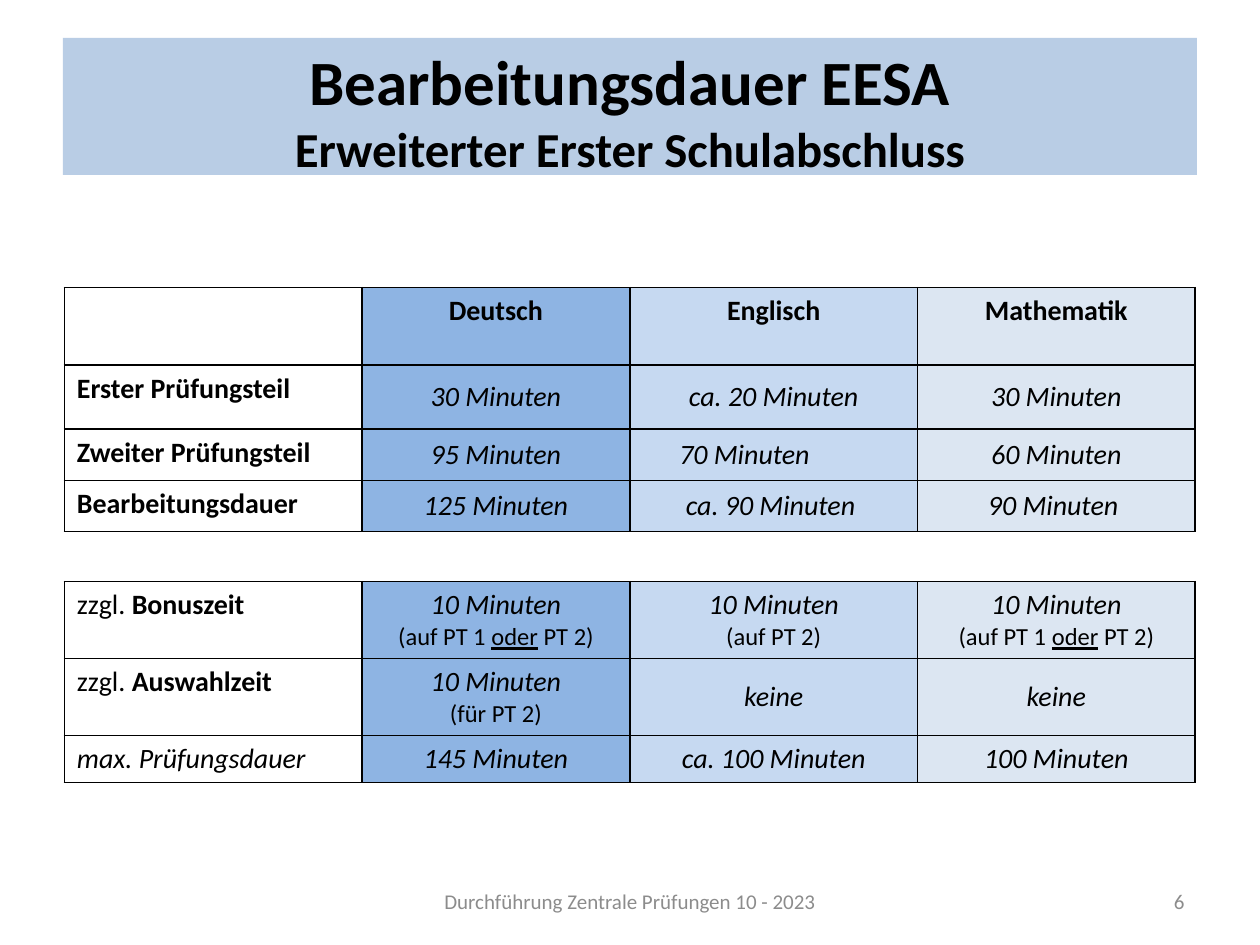
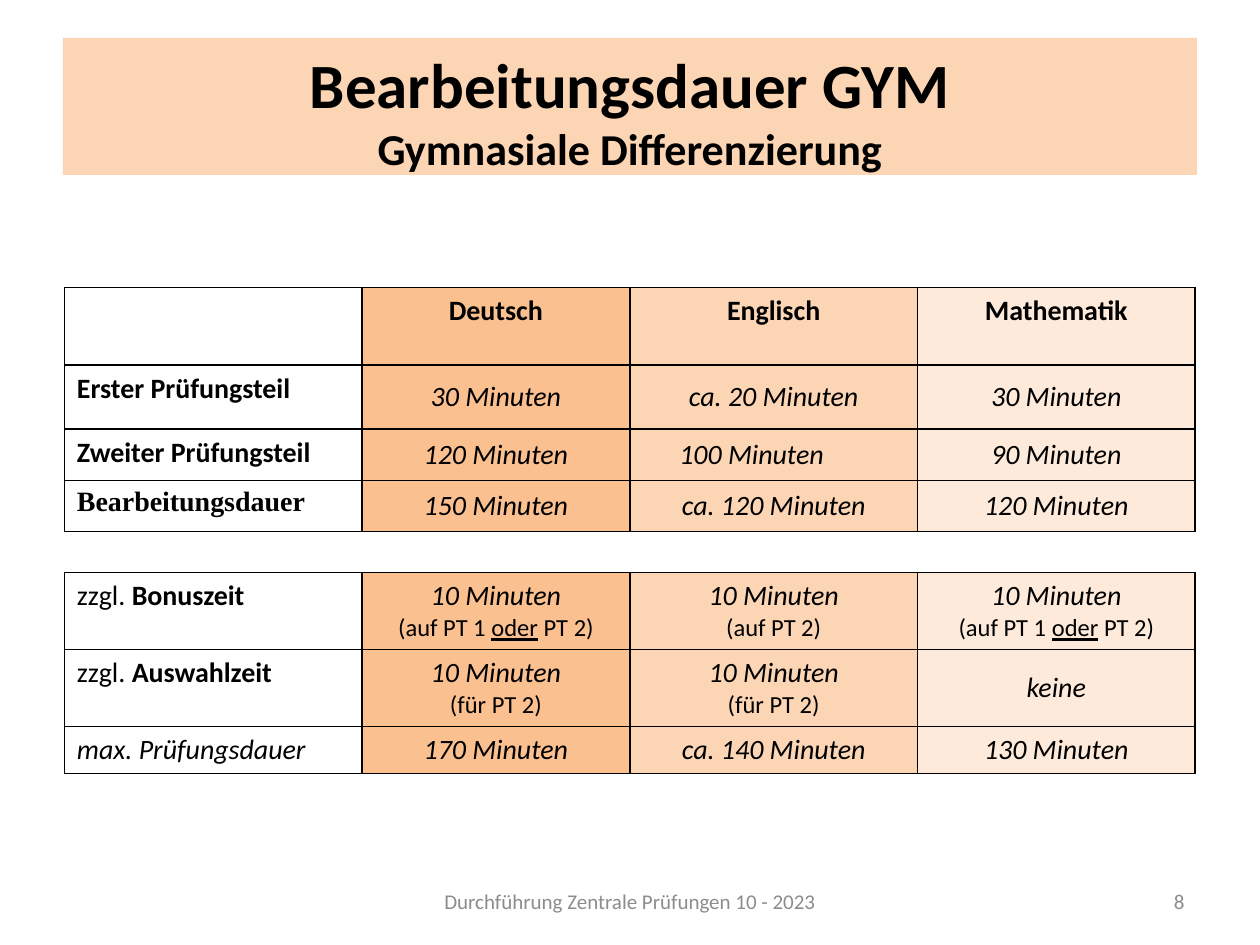
from collections import namedtuple
from dataclasses import dataclass

from lxml.etree import SubElement
from pptx import Presentation
from pptx.dml.color import RGBColor as Rgb
from pptx.enum.shapes import MSO_SHAPE as Shape
from pptx.enum.text import MSO_ANCHOR as Anchor, PP_ALIGN as Align
from pptx.oxml.ns import qn
from pptx.util import Pt

Box = namedtuple("Box", "left top width height")
Tint = namedtuple("Tint", "band subjects")


@dataclass(frozen=True)
class Theme:
    """Colours, fonts and type sizes of the deck."""
    font: str = "Calibri"
    serif: str = "Times New Roman"
    ink: str = "000000"
    muted: str = "8C8C8C"
    title: float = 36
    body: float = 16
    detail: float = 14
    footer: float = 12
    border: float = 1
    blue: Tint = Tint("B9CDE5", ("8EB4E3", "C6D9F1", "DCE6F2"))
    orange: Tint = Tint("FCD5B5", ("FAC090", "FCD5B5", "FDEADA"))


THEME = Theme()


@dataclass(frozen=True)
class Line:
    """One paragraph of a table cell, as (text, emphasis) spans."""
    spans: tuple
    size: float
    bold: bool = False
    italic: bool = False
    align: Align = Align.CENTER
    indent: float = 0
    font: str = THEME.font


@dataclass(frozen=True)
class Exam:
    """What differs between the two exam pages."""
    heading: str
    subtitle: str
    subtitle_size: float
    number: str
    tint: Tint
    sections: tuple
    extras: tuple
    extras_top: float
    total_font: str = THEME.font


SUBJECTS = ("Deutsch", "Englisch", "Mathematik")
COLUMNS = (170, 153.2, 164.3, 158.7)
SECTION_ROWS = (44.3, 36.6, 29.2, 29.2)
EXTRA_ROWS = (44, 44, 26.8)
TITLE_BOX = Box(36, 21.6, 648, 78.4)
FOOTER_BOX = Box(246, 500.5, 228, 28.8)
NUMBER_BOX = Box(516, 500.5, 168, 28.8)
TABLE_LEFT, SECTIONS_TOP = 36.8, 164.4


def color(code):
    """Return the colour of a hex code."""
    return Rgb.from_string(code)


def style(font, size=None, ink=THEME.ink, name=THEME.font, bold=False, italic=False):
    """Set a font's face, size, colour and weight."""
    font.name, font.bold, font.italic = name, bold, italic
    font.color.rgb = color(ink)
    if size:
        font.size = Pt(size)


def points(box):
    """Convert a box to lengths."""
    return [Pt(value) for value in box]


def bold_line(text, align=Align.CENTER, font=THEME.font):
    """Make a bold line."""
    return Line(((text, ""),), THEME.body, bold=True, align=align, font=font)


def duration(text, align=Align.CENTER, indent=0):
    """Make an italic line."""
    return Line(((text, ""),), THEME.body, italic=True, align=align, indent=indent)


def detail(*spans):
    """Make a small line under a duration."""
    return Line(spans, THEME.detail)


def extra_label(word):
    """Make the label of an additional time."""
    return [Line((("zzgl. ", ""), (word, "b")), THEME.body, align=Align.LEFT)]


def draw_title(page, box, exam):
    """Draw the tinted title band."""
    band = page.shapes.add_shape(Shape.RECTANGLE, *points(box))
    band.shadow.inherit = False
    band.fill.solid()
    band.fill.fore_color.rgb = color(exam.tint.band)
    band.line.fill.background()
    frame = band.text_frame
    frame.word_wrap, frame.vertical_anchor = True, Anchor.MIDDLE
    frame.margin_top, frame.margin_bottom = Pt(4), 0
    para = frame.paragraphs[0]
    para.alignment = Align.CENTER
    style(para.font, bold=True)
    span = para.add_run()
    span.text, span.font.size = exam.heading, Pt(THEME.title)
    para.add_line_break()
    span = para.add_run()
    span.text, span.font.size = exam.subtitle, Pt(exam.subtitle_size)


def draw_footer(page, box, text, align):
    """Draw one grey footer text."""
    frame = page.shapes.add_textbox(*points(box)).text_frame
    frame.word_wrap, frame.vertical_anchor = True, Anchor.MIDDLE
    para = frame.paragraphs[0]
    para.text, para.alignment = text, align
    style(para.font, THEME.footer, THEME.muted)


def draw_borders(cell):
    """Draw a solid border on each side of a cell."""
    props = cell._tc.get_or_add_tcPr()
    for side in ("lnL", "lnR", "lnT", "lnB"):
        edge = SubElement(props, qn(f"a:{side}"), w=str(Pt(THEME.border)))
        fill = SubElement(edge, qn("a:solidFill"))
        SubElement(fill, qn("a:srgbClr"), val=THEME.ink)


def fill_cell(cell, lines):
    """Write lines into a cell."""
    frame = cell.text_frame
    for index, line in enumerate(lines):
        para = frame.add_paragraph() if index else frame.paragraphs[0]
        para.alignment = line.align
        style(para.font, line.size, name=line.font, bold=line.bold, italic=line.italic)
        if line.indent:
            para._p.get_or_add_pPr().set("marL", str(Pt(line.indent)))
        for text, emphasis in line.spans:
            span = para.add_run()
            span.text = text
            if emphasis == "b":
                span.font.bold = True
            elif emphasis == "u":
                span.font.underline = True


def draw_table(page, left, top, heights, rows, tints, header=False):
    """Draw a bordered table with one tint per subject column."""
    box = Box(left, top, sum(COLUMNS), sum(heights))
    table = page.shapes.add_table(len(rows), len(COLUMNS), *points(box)).table
    table.first_row = table.horz_banding = False
    for column, width in zip(table.columns, COLUMNS):
        column.width = Pt(width)
    for r, (height, row) in enumerate(zip(heights, rows)):
        table.rows[r].height = Pt(height)
        for c, lines in enumerate(row):
            cell = table.cell(r, c)
            draw_borders(cell)
            if c:
                cell.fill.solid()
                cell.fill.fore_color.rgb = color(tints[c - 1])
            else:
                cell.fill.background()
            if c and not (header and r == 0):
                cell.vertical_anchor = Anchor.MIDDLE
            fill_cell(cell, lines)


def section_rows(exam):
    """Build the rows of the exam sections."""
    first, second, total = exam.sections
    german, english, maths = second
    return [
        [[], *([bold_line(name)] for name in SUBJECTS)],
        [[bold_line("Erster Prüfungsteil", Align.LEFT)], *([duration(t)] for t in first)],
        [[bold_line("Zweiter Prüfungsteil", Align.LEFT)], [duration(german)],
         [duration(english, Align.LEFT, 21)], [duration(maths)]],
        [[bold_line("Bearbeitungsdauer", Align.LEFT, exam.total_font)],
         *([duration(t)] for t in total)],
    ]


def extra_rows(exam):
    """Build the rows of the additional times."""
    choices, limits = exam.extras
    ten = duration("10 Minuten")
    either = [ten, detail(("(auf PT 1 ", ""), ("oder", "u"), (" PT 2)", ""))]
    chosen = [ten, detail(("(für PT 2)", ""))]
    return [
        [extra_label("Bonuszeit"), either, [ten, detail(("(auf PT 2)", ""))], either],
        [extra_label("Auswahlzeit"), *(chosen if c else [duration("keine")] for c in choices)],
        [[duration("max. Prüfungsdauer", Align.LEFT)], *([duration(t)] for t in limits)],
    ]


def draw_exam(deck, exam):
    """Add the page of one exam."""
    page = deck.slides.add_slide(deck.slide_layouts[6])
    tints = exam.tint.subjects
    draw_title(page, TITLE_BOX, exam)
    draw_footer(page, FOOTER_BOX, "Durchführung Zentrale Prüfungen 10 - 2023", Align.CENTER)
    draw_footer(page, NUMBER_BOX, exam.number, Align.RIGHT)
    draw_table(page, TABLE_LEFT, SECTIONS_TOP, SECTION_ROWS, section_rows(exam), tints, header=True)
    draw_table(page, TABLE_LEFT, exam.extras_top, EXTRA_ROWS, extra_rows(exam), tints)


FIRST_SECTION = ("30 Minuten", "ca. 20 Minuten", "30 Minuten")
EXAMS = (
    Exam("Bearbeitungsdauer EESA", "Erweiterter Erster Schulabschluss", 27.9, "6", THEME.blue,
         (FIRST_SECTION, ("95 Minuten", "70 Minuten", "60 Minuten"),
          ("125 Minuten", "ca. 90 Minuten ", "90 Minuten ")),
         ((True, False, False), ("145 Minuten", "ca. 100 Minuten", "100 Minuten")), 332.4),
    Exam("Bearbeitungsdauer GYM", "Gymnasiale Differenzierung", 25.2, "8", THEME.orange,
         (FIRST_SECTION, ("120 Minuten", "100 Minuten", "90 Minuten"),
          ("150 Minuten", "ca. 120 Minuten", "120 Minuten")),
         ((True, True, False), ("170 Minuten", "ca. 140 Minuten", "130 Minuten")), 327.3,
         THEME.serif),
)


def main():
    """Build and save the deck."""
    deck = Presentation()
    deck.slide_width, deck.slide_height = Pt(720), Pt(540)
    for exam in EXAMS:
        draw_exam(deck, exam)
    deck.save("out.pptx")


if __name__ == "__main__":
    main()
